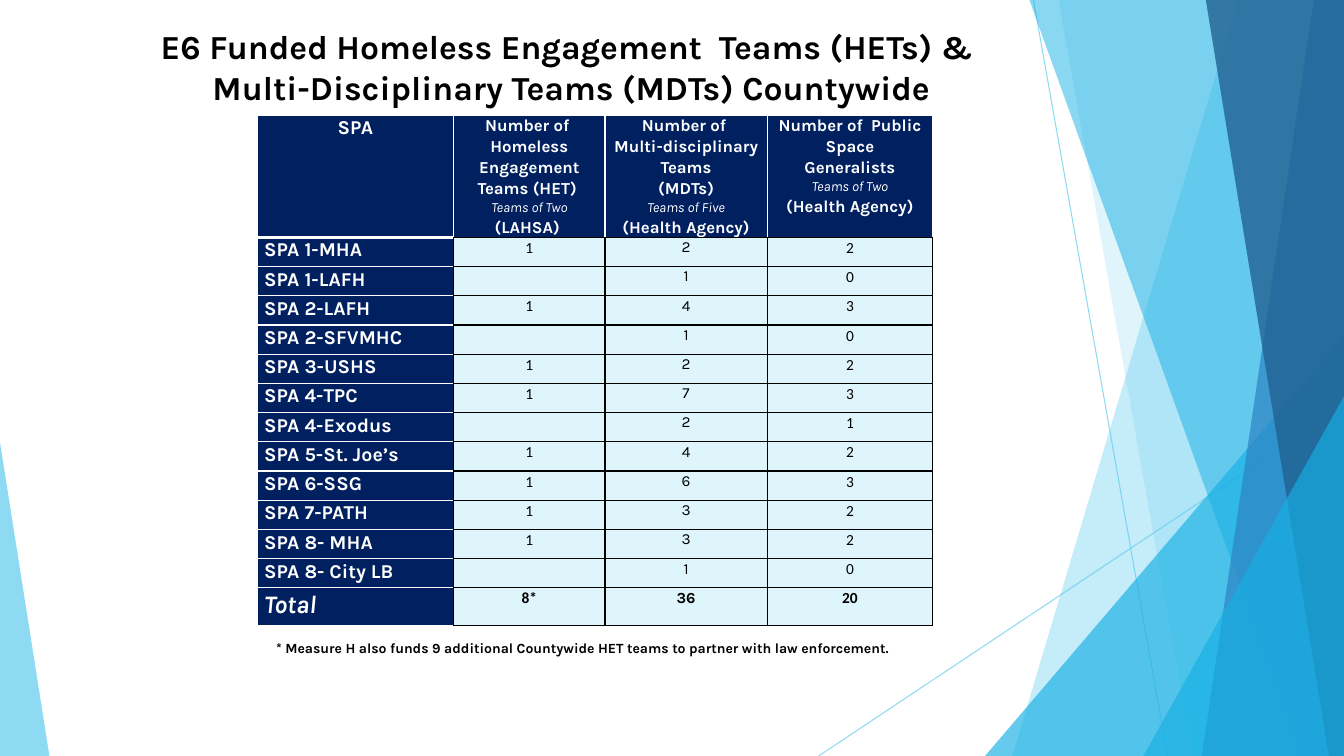
from collections import namedtuple

from lxml.etree import SubElement
from pptx import Presentation
from pptx.dml.color import RGBColor
from pptx.enum.shapes import MSO_CONNECTOR, MSO_SHAPE
from pptx.enum.text import MSO_ANCHOR, MSO_AUTO_SIZE, PP_ALIGN
from pptx.oxml.ns import qn
from pptx.util import Inches, Pt

Box = namedtuple("Box", "left top width height")

SKY = RGBColor(0x5F, 0xCB, 0xEF)
CYAN = RGBColor(0x17, 0xB0, 0xE4)
BLUE = RGBColor(0x2E, 0x83, 0xC3)
DEEP_BLUE = RGBColor(0x22, 0x62, 0x92)
NAVY = RGBColor(0x00, 0x20, 0x60)
PALE = RGBColor(0xDF, 0xF5, 0xFC)
WHITE = RGBColor(0xFF, 0xFF, 0xFF)
BLACK = RGBColor(0x00, 0x00, 0x00)

TITLE = ["E6 Funded Homeless Engagement  Teams (HETs) & ",
         "Multi-Disciplinary Teams (MDTs) Countywide"]
FOOTNOTE = "* Measure H also funds 9 additional Countywide HET teams to partner with law enforcement."
HEADINGS = [
    ["Number of ", "Homeless Engagement Teams (HET) ", "Teams of Two", "(LAHSA) "],
    ["Number of ", "Multi-disciplinary Teams", "(MDTs)", "Teams of Five", "(Health Agency)"],
    ["Number of  Public Space", "Generalists", "Teams of Two", "(Health Agency)"],
]
TEAM_SIZES = {"Teams of Two", "Teams of Five"}
TEAMS = [
    ("SPA 1-MHA", "1", "2", "2"),
    ("SPA 1-LAFH", "", "1", "0"),
    ("SPA 2-LAFH", "1", "4", "3"),
    ("SPA 2-SFVMHC", "", "1", "0"),
    ("SPA 3-USHS", "1", "2", "2"),
    ("SPA 4-TPC", "1", "7", "3"),
    ("SPA 4-Exodus", "", "2", "1"),
    ("SPA 5-St. Joe’s", "1", "4", "2"),
    ("SPA 6-SSG", "1", "6", "3"),
    ("SPA 7-PATH", "1", "3", "2"),
    ("SPA 8- MHA", "1", "3", "2"),
    ("SPA 8- City LB", "", "1", "0"),
    ("Total", "8*", "36", "20"),
]
COLUMN_WIDTHS = [1.95, 1.5, 1.61, 1.64]
COUNT_FONTS = ["Calibri", "Karla", "Calibri"]


def add_text(paragraph, text, size, color=BLACK, font="Karla", bold=True, italic=False):
    run = paragraph.add_run()
    run.text = text
    run.font.size = Pt(size)
    run.font.name = font
    run.font.bold = bold
    run.font.italic = italic
    run.font.color.rgb = color


def next_paragraph(frame, index):
    return frame.add_paragraph() if index else frame.paragraphs[0]


def set_opacity(shape, percent):
    color = next(shape._element.spPr.iter(qn("a:srgbClr")))
    SubElement(color, qn("a:alpha"), val=str(percent * 1000))


def paint(shape, color, opacity):
    shape.shadow.inherit = False
    shape.fill.solid()
    shape.fill.fore_color.rgb = color
    shape.line.fill.background()
    set_opacity(shape, opacity)


def add_ray(slide, box, start, end):
    ends = [Inches(edge + offset) for point in (start, end)
            for edge, offset in zip((box.left, box.top), point)]
    ray = slide.shapes.add_connector(MSO_CONNECTOR.STRAIGHT, *ends)
    ray.line.color.rgb = SKY
    ray.line.width = Pt(0.75)
    set_opacity(ray, 70)
    SubElement(ray._element.spPr, qn("a:effectLst"))


def add_facet(slide, box, top_x, bottom_x, color, opacity):
    corners = [(top_x, 0), (box.width, 0), (box.width, box.height), (bottom_x, box.height)]
    outline = [(Inches(box.left + x), Inches(box.top + y)) for x, y in corners]
    builder = slide.shapes.build_freeform(*outline[0], scale=1.0)
    builder.add_line_segments(outline[1:], close=True)
    paint(builder.convert_to_shape(), color, opacity)


def add_wedge(slide, box, apex, color, opacity):
    wedge = slide.shapes.add_shape(MSO_SHAPE.ISOSCELES_TRIANGLE, *map(Inches, box))
    wedge.adjustments[0] = apex
    paint(wedge, color, opacity)


def add_corner_wedge(slide, box, x, y):
    corner = Box(box.left + x, box.top + y, box.width - x, box.height - y)
    add_wedge(slide, corner, 1, CYAN, 66)


def add_facets(slide, box):
    add_ray(slide, box, (2.13, 0), (3.46, box.height))
    add_ray(slide, box, (box.width, 4.03), (0, box.height))
    add_facet(slide, box, 4.16, 1.92, SKY, 36)
    add_facet(slide, box, 2.38, 3.71, SKY, 20)
    add_corner_wedge(slide, box, 1.65, 3.33)
    add_facet(slide, box, 2.09, 4.79, CYAN, 50)
    add_facet(slide, box, 4.91, 3.8, BLUE, 70)
    add_facet(slide, box, 3.84, 5.06, DEEP_BLUE, 80)
    add_corner_wedge(slide, box, 3.22, 3.93)


def add_title(slide, box):
    title = slide.shapes.title
    title.left, title.top, title.width, title.height = map(Inches, box)
    frame = title.text_frame
    frame.word_wrap = True
    frame.auto_size = MSO_AUTO_SIZE.NONE
    frame.vertical_anchor = MSO_ANCHOR.TOP
    for index, line in enumerate(TITLE):
        paragraph = next_paragraph(frame, index)
        paragraph.alignment = PP_ALIGN.CENTER
        add_text(paragraph, line, 24)


def style_cell(cell, fill, left=BLACK, right=BLACK, top=BLACK, bottom=BLACK, bottom_width=1):
    cell.margin_left = cell.margin_right = Inches(0.07)
    cell.margin_top = cell.margin_bottom = 0
    properties = cell._tc.get_or_add_tcPr()
    borders = [("L", left, 1), ("R", right, 1), ("T", top, 1), ("B", bottom, bottom_width)]
    for side, color, width in borders:
        border = SubElement(properties, qn("a:ln" + side), w=str(Pt(width)))
        SubElement(SubElement(border, qn("a:solidFill")), qn("a:srgbClr"), val=str(color))
    cell.fill.solid()
    cell.fill.fore_color.rgb = fill


def cell_paragraph(cell, index=0, alignment=PP_ALIGN.CENTER):
    paragraph = next_paragraph(cell.text_frame, index)
    paragraph.alignment = alignment
    paragraph.line_spacing = 1.07
    return paragraph


def fill_header(table):
    corner = table.cell(0, 0)
    style_cell(corner, NAVY, WHITE, WHITE, WHITE, WHITE, bottom_width=3)
    add_text(cell_paragraph(corner), "SPA", 14, WHITE)
    for column, heading in enumerate(HEADINGS, 1):
        cell = table.cell(0, column)
        style_cell(cell, NAVY, WHITE, WHITE, WHITE)
        for index, line in enumerate(heading):
            note = line in TEAM_SIZES
            add_text(cell_paragraph(cell, index), line, 10 if note else 12, WHITE,
                     bold=not note, italic=note)


def fill_team_row(table, row, area, counts):
    total = area == "Total"
    label = table.cell(row, 0)
    style_cell(label, NAVY, WHITE, BLACK, WHITE, WHITE)
    add_text(cell_paragraph(label, alignment=PP_ALIGN.LEFT), area, 18 if total else 14,
             WHITE, italic=total)
    for column, (count, font) in enumerate(zip(counts, COUNT_FONTS), 1):
        cell = table.cell(row, column)
        style_cell(cell, PALE)
        paragraph = cell_paragraph(cell)
        if count:
            add_text(paragraph, count, 11, font=font, bold=total)
        else:
            SubElement(paragraph._p, qn("a:endParaRPr"), sz="1100")


def add_team_table(slide, box):
    table = slide.shapes.add_table(len(TEAMS) + 1, len(COLUMN_WIDTHS), *map(Inches, box)).table
    table.first_row = table.horz_banding = False
    for column, width in zip(table.columns, COLUMN_WIDTHS):
        column.width = Inches(width)
    heights = [1.16] + [0.29] * (len(TEAMS) - 1) + [0.37]
    for row, height in zip(table.rows, heights):
        row.height = Inches(height)
    fill_header(table)
    for row, (area, *counts) in enumerate(TEAMS, 1):
        fill_team_row(table, row, area, counts)


def add_footnote(slide, box):
    frame = slide.shapes.add_textbox(*map(Inches, box)).text_frame
    frame.word_wrap = False
    add_text(frame.paragraphs[0], FOOTNOTE, 10)


def main():
    deck = Presentation()
    deck.slide_width = Inches(13.33)
    deck.slide_height = Inches(7.5)
    slide = deck.slides.add_slide(deck.slide_layouts[5])
    add_facets(slide, Box(8.12, 0, 5.21, 7.5))
    add_wedge(slide, Box(0, 4.39, 0.49, 3.11), 0, SKY, 70)
    add_team_table(slide, Box(2.55, 1.14, 6.7, 5.01))
    add_title(slide, Box(0.72, 0.21, 9.89, 0.91))
    add_footnote(slide, Box(2.64, 6.3, 6.32, 0.27))
    deck.save("out.pptx")


if __name__ == "__main__":
    main()
